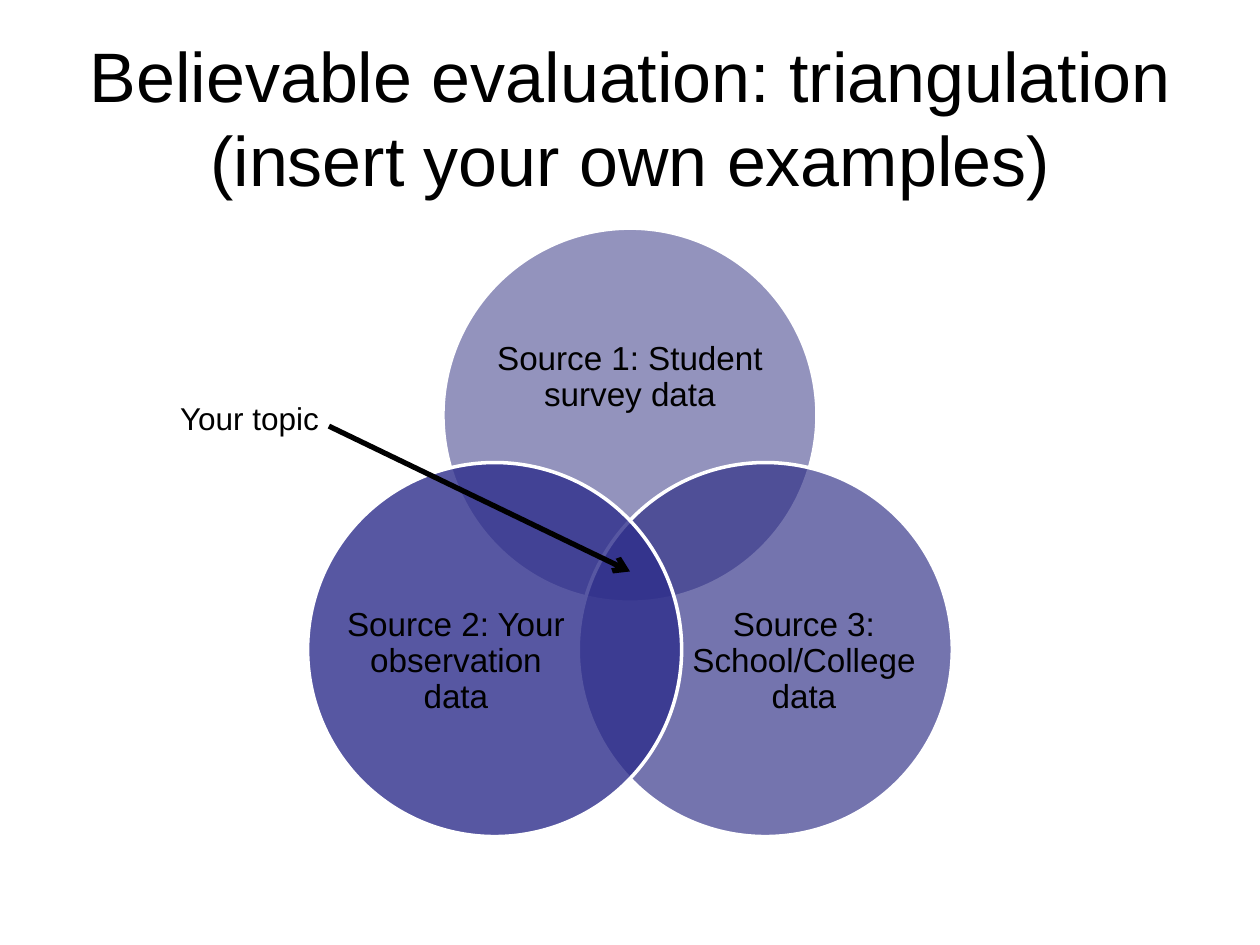
"""Build a triangulation slide: three overlapping sources around one topic."""
import math

import pptx
import pptx.dml.color
import pptx.enum.shapes
import pptx.enum.text
import pptx.oxml
import pptx.oxml.ns
import pptx.util

Cm = pptx.util.Cm
Pt = pptx.util.Pt
ALIGN = pptx.enum.text.PP_ALIGN
ANCHOR = pptx.enum.text.MSO_ANCHOR
NAMESPACE = pptx.oxml.ns.nsdecls("a")


def colour(hex_value):
    return pptx.dml.color.RGBColor.from_string(hex_value)


def apply(target, values):
    for name, value in values.items():
        setattr(target, name, value)


class Canvas:
    ink = "000000"
    outline = "FFFFFF"
    font = "Arial"
    flush = dict.fromkeys(("margin_left", "margin_right", "margin_top", "margin_bottom"), 0)

    def __init__(self, slide):
        self.slide = slide

    def text(self, box, words, size, frame_format, paragraph_format):
        frame = self.slide.shapes.add_textbox(*map(Cm, box)).text_frame
        apply(frame, {"word_wrap": True, **frame_format})
        paragraph = frame.paragraphs[0]
        paragraph.text = words
        apply(paragraph, paragraph_format)
        apply(paragraph.font, {"name": self.font, "size": Pt(size)})
        paragraph.font.color.rgb = colour(self.ink)

    def circle(self, centre_x, centre_y, radius, fill, opacity):
        box = (centre_x - radius, centre_y - radius, 2 * radius, 2 * radius)
        circle = self.slide.shapes.add_shape(
            pptx.enum.shapes.MSO_SHAPE.OVAL, *map(Cm, box))
        circle.shadow.inherit = False
        circle.fill.solid()
        circle.fill.fore_color.rgb = colour(fill)
        tint = circle.fill._xPr.find(".//" + pptx.oxml.ns.qn("a:srgbClr"))
        tint.append(pptx.oxml.parse_xml(f'<a:alpha {NAMESPACE} val="{opacity * 1000}"/>'))
        circle.line.color.rgb = colour(self.outline)
        circle.line.width = Pt(2)

    def label(self, centre_x, centre_y, width, height, words):
        box = (centre_x - width / 2, centre_y - height / 2, width, height)
        self.text(box, words, 19, {"vertical_anchor": ANCHOR.MIDDLE, **self.flush},
                  {"alignment": ALIGN.CENTER, "line_spacing": 0.9})

    def arrow(self, start, end):
        arrow = self.slide.shapes.add_connector(
            pptx.enum.shapes.MSO_CONNECTOR.STRAIGHT, *map(Cm, start + end))
        arrow.line.color.rgb = colour(self.ink)
        arrow.line.width = Pt(3)
        arrow.line._get_or_add_ln().append(
            pptx.oxml.parse_xml(f'<a:tailEnd {NAMESPACE} type="arrow"/>'))
        arrow._element.spPr.append(pptx.oxml.parse_xml(f"<a:effectLst {NAMESPACE}/>"))


def main():
    deck = pptx.Presentation()
    apply(deck, {"slide_width": Cm(25.4), "slide_height": Cm(19.05)})
    canvas = Canvas(deck.slides.add_slide(deck.slide_layouts[6]))

    canvas.text((1.27, 0.76, 22.86, 3.18),
                "Believable evaluation: triangulation (insert your own examples)", 40,
                {"vertical_anchor": ANCHOR.MIDDLE}, {"alignment": ALIGN.CENTER})

    overlap = (12.7, 11.52)
    radius, orbit = 3.77, 3.15
    sources = [
        ("Source 1: Student survey data", "29297D", 50, (0, -0.75), (5.54, 3.4)),
        ("Source 3: School/College data", "2B2B84", 65, (0.78, 0.25), (4.52, 4.14)),
        ("Source 2: Your observation data", "2E2E8B", 80, (-0.78, 0.25), (4.52, 4.14)),
    ]
    for index, (words, fill, opacity, shift, size) in enumerate(sources):
        angle = math.radians(120 * index - 90)
        centre_x = overlap[0] + orbit * math.cos(angle)
        centre_y = overlap[1] + orbit * math.sin(angle)
        canvas.circle(centre_x, centre_y, radius, fill, opacity)
        canvas.label(centre_x + shift[0], centre_y + shift[1], *size, words)

    canvas.text((3.38, 7.92, 3.33, 1.02), "Your topic", 18,
                {"word_wrap": False, "auto_size": pptx.enum.text.MSO_AUTO_SIZE.SHAPE_TO_FIT_TEXT},
                {"alignment": ALIGN.LEFT})
    canvas.arrow((6.63, 8.59), overlap)

    deck.save("out.pptx")


if __name__ == "__main__":
    main()
